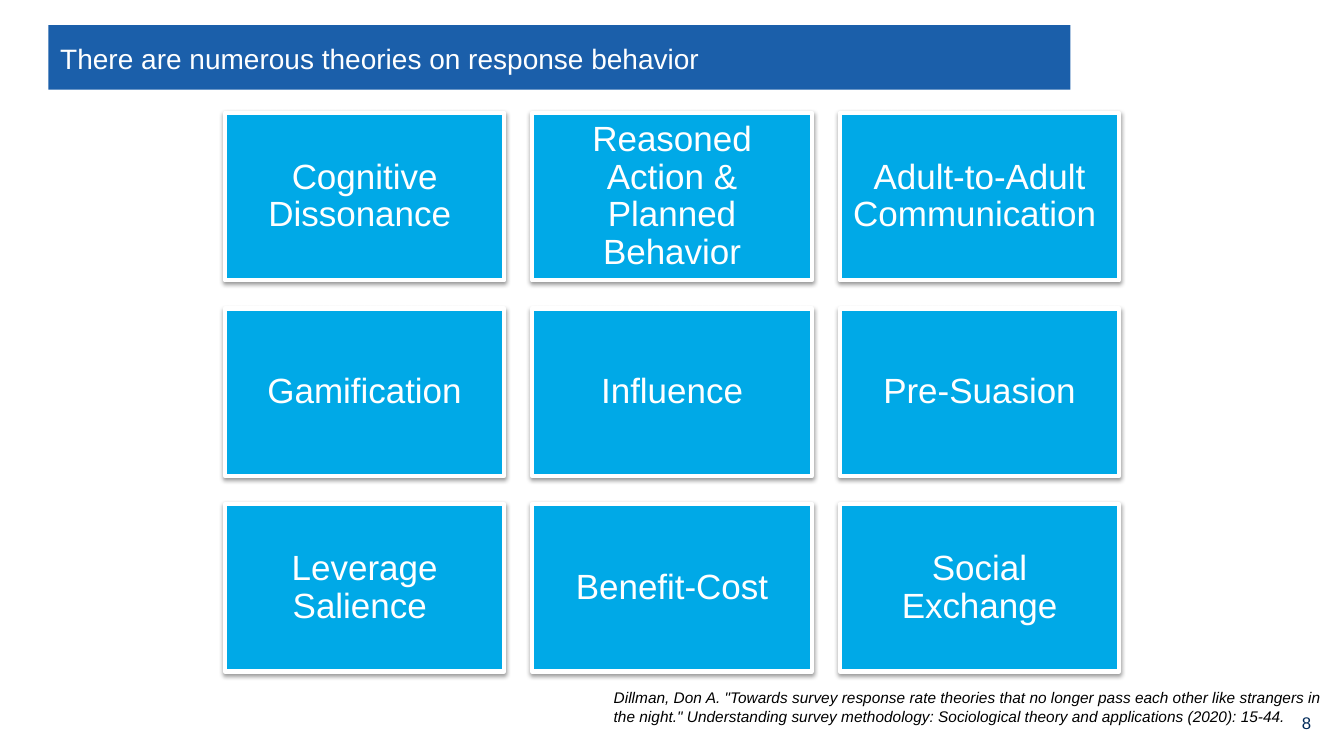
from lxml.etree import SubElement
from pptx import Presentation
from pptx.dml.color import RGBColor
from pptx.enum.shapes import MSO_SHAPE
from pptx.enum.text import MSO_ANCHOR, PP_ALIGN
from pptx.oxml.ns import qn
from pptx.util import Pt

WHITE = RGBColor(0xFF, 0xFF, 0xFF)
BLACK = RGBColor(0x00, 0x00, 0x00)
NAVY = RGBColor(0x00, 0x2A, 0x59)
BAND_BLUE = RGBColor(0x1B, 0x5F, 0xAA)
TILE_BLUE = RGBColor(0x00, 0xA9, 0xE7)

THEORIES = [
    ["Cognitive Dissonance ", "Reasoned Action & Planned Behavior", "Adult-to-Adult Communication "],
    ["Gamification", "Influence", "Pre-Suasion"],
    ["Leverage Salience ", "Benefit-Cost", "Social Exchange"],
]
CITATION = (
    'Dillman, Don A. "Towards survey response rate theories that no longer pass each other '
    'like strangers in the night." Understanding survey methodology: Sociological theory '
    "and applications (2020): 15-44."
)


def write_text(shape, text, size, color, frame_format, align=PP_ALIGN.LEFT, italic=False):
    frame = shape.text_frame
    for name, value in {"word_wrap": True, **frame_format}.items():
        setattr(frame, name, value)
    para = frame.paragraphs[0]
    para.alignment = align
    span = para.add_run()
    span.text = text
    for name, value in {"name": "Arial", "size": Pt(size), "italic": italic}.items():
        setattr(span.font, name, value)
    span.font.color.rgb = color
    return para


def add_panel(left, top, width, height, fill):
    panel = page.shapes.add_shape(
        MSO_SHAPE.RECTANGLE, Pt(left), Pt(top), Pt(width), Pt(height))
    panel.shadow.inherit = False
    panel.fill.solid()
    panel.fill.fore_color.rgb = fill
    return panel


deck = Presentation()
deck.slide_width, deck.slide_height = Pt(960), Pt(540)
page = deck.slides.add_slide(deck.slide_layouts[6])

band = add_panel(34.5, 18, 730, 46, BAND_BLUE)
band.line.fill.background()
write_text(band, "There are numerous theories on response behavior", 20, WHITE,
           {"vertical_anchor": MSO_ANCHOR.MIDDLE, "margin_left": Pt(8.5), "margin_top": Pt(5)})

number_box = page.shapes.add_textbox(Pt(895.7), Pt(504), Pt(48), Pt(24))
write_text(number_box, "8", 12, NAVY, {"vertical_anchor": MSO_ANCHOR.MIDDLE}, PP_ALIGN.RIGHT)

citation_box = page.shapes.add_textbox(Pt(431.3), Pt(488.2), Pt(528.7), Pt(34))
write_text(citation_box, CITATION, 11, BLACK, {}, italic=True)

tile_frame = {"vertical_anchor": MSO_ANCHOR.MIDDLE}
for side in ("left", "top", "right", "bottom"):
    tile_frame[f"margin_{side}"] = Pt(7.5)

tile_width, tile_height, gap = 199.6, 119.7, 20
for row, names in enumerate(THEORIES):
    for column, theory in enumerate(names):
        tile = add_panel(160.6 + column * (tile_width + gap),
                         80.6 + row * (tile_height + gap),
                         tile_width, tile_height, TILE_BLUE)
        tile.line.color.rgb = WHITE
        tile.line.width = Pt(3)
        effects = tile.element.spPr.find(qn("a:effectLst"))
        shadow = SubElement(effects, qn("a:outerShdw"), blurRad=str(Pt(3.1)),
                            dist=str(Pt(1.6)), dir="5400000", rotWithShape="0")
        shade = SubElement(shadow, qn("a:srgbClr"), val=str(BLACK))
        SubElement(shade, qn("a:alpha"), val="38000")
        para = write_text(tile, theory, 25, WHITE, tile_frame, PP_ALIGN.CENTER)
        para.line_spacing = 0.9

deck.save("out.pptx")
